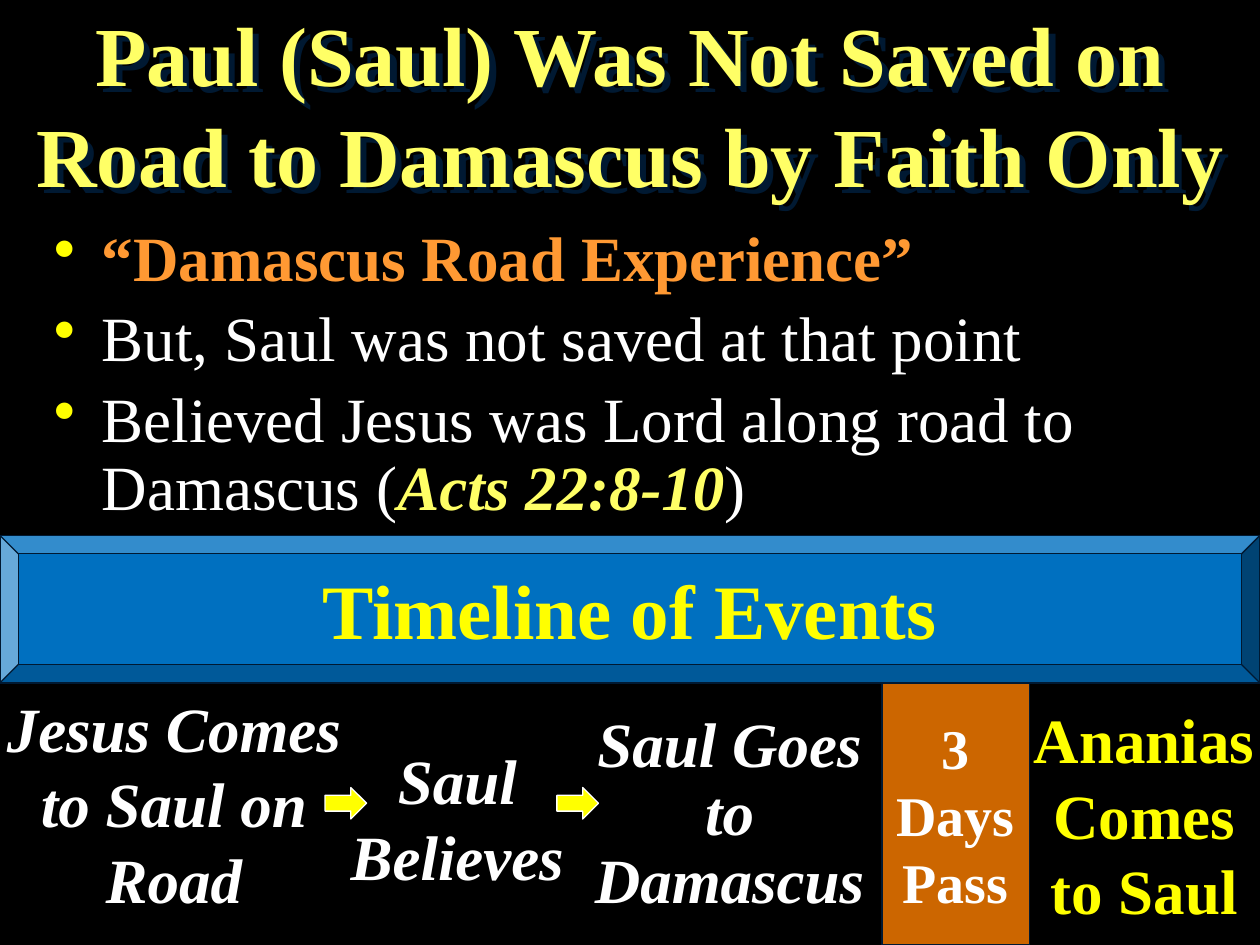
import pptx
import pptx.util
import pptx.dml.color
import pptx.enum.shapes
import pptx.enum.text
import pptx.oxml
import pptx.oxml.ns
from pptx.util import Inches, Pt

SHAPES = pptx.enum.shapes.MSO_SHAPE
ALIGN = pptx.enum.text.PP_ALIGN
ANCHOR = pptx.enum.text.MSO_ANCHOR
FONT = "Times New Roman"
COLORS = {
    "background": "000000",
    "title": "FFFF66",
    "accent": "FF9933",
    "text": "FFFFFF",
    "yellow": "FFFF00",
    "banner": "0070C0",
    "days": "CC6600",
    "outline": "001932",
}


def rgb(name):
    return pptx.dml.color.RGBColor.from_string(COLORS[name])


def xml(tag, attributes="", inner=""):
    namespace = pptx.oxml.ns.nsdecls("a")
    return pptx.oxml.parse_xml(f"<a:{tag} {namespace} {attributes}>{inner}</a:{tag}>")


def add_run(paragraph, text, size=36, color="text", bold=False, italic=False):
    run = paragraph.add_run()
    run.text = text
    font = run.font
    font.name, font.size, font.bold, font.italic = FONT, Pt(size), bold, italic
    font.color.rgb = rgb(color)


def write(holder, text, anchor=ANCHOR.MIDDLE, line_spacing=None, **style):
    """Fill a shape or text box with one centred bold paragraph."""
    frame = holder.text_frame
    frame.word_wrap = True
    frame.vertical_anchor = anchor
    paragraph = frame.paragraphs[0]
    paragraph.alignment = ALIGN.CENTER
    if line_spacing:
        paragraph.line_spacing = line_spacing
    add_run(paragraph, text, bold=True, **style)


def add_text(slide, box, text, **style):
    holder = slide.shapes.add_textbox(*map(Inches, box))
    write(holder, text, **style)
    return holder


def add_filled(slide, kind, box, fill, line):
    shape = slide.shapes.add_shape(kind, *map(Inches, box))
    shape.shadow.inherit = False
    shape.fill.solid()
    shape.fill.fore_color.rgb = rgb(fill)
    shape.line.color.rgb = rgb(line)
    shape.line.width = Pt(0.75)
    return shape


def add_title(slide, box):
    title = add_text(slide, box, "Paul (Saul) Was Not Saved on Road to Damascus by Faith Only",
                     anchor=ANCHOR.BOTTOM, size=48, color="title")
    shadow = (f'<a:outerShdw dist="64000" dir="2700000" algn="ctr">'
              f'<a:srgbClr val="{COLORS["outline"]}"/></a:outerShdw>')
    title.element.spPr.append(xml("effectLst", inner=shadow))


def add_points(slide, box):
    points = [
        [("“Damascus Road Experience”", {"color": "accent", "bold": True})],
        [("But, Saul was not saved at that point", {})],
        [("Believed Jesus was Lord along road to Damascus (", {}),
         ("Acts 22:8-10", {"color": "title", "bold": True, "italic": True}),
         (")", {})],
    ]
    frame = slide.shapes.add_textbox(*map(Inches, box)).text_frame
    frame.word_wrap = True
    for index, runs in enumerate(points):
        paragraph = frame.add_paragraph() if index else frame.paragraphs[0]
        properties = paragraph._p.get_or_add_pPr()
        properties.set("marL", str(Inches(0.38)))
        properties.set("indent", str(-Inches(0.38)))
        properties.append(xml("buClr", inner=f'<a:srgbClr val="{COLORS["yellow"]}"/>'))
        properties.append(xml("buChar", 'char="•"'))
        paragraph.line_spacing = 0.9
        if index:
            paragraph.space_before = Pt(7.2)
        for text, style in runs:
            add_run(paragraph, text, **style)


def add_banner(slide, box):
    banner = add_filled(slide, SHAPES.BEVEL, box, "banner", "outline")
    banner.adjustments[0] = 0.125
    write(banner, "Timeline of Events", size=44, color="yellow")


def add_timeline(slide, box):
    left, top, _, height = box

    def place(x, y, w, h):
        return left + x, top + y, w, h

    add_text(slide, place(-0.08, 0, 2.92, 1.92), "Jesus Comes to Saul on Road",
             anchor=ANCHOR.TOP, italic=True)
    add_text(slide, place(2.67, 0.41, 1.92, 1.31), "Saul Believes", italic=True)
    add_text(slide, place(4.58, 0.18, 2.42, 1.74), "Saul Goes to Damascus",
             line_spacing=0.9, italic=True)
    for x in (2.58, 4.42):
        add_filled(slide, SHAPES.RIGHT_ARROW, place(x, 0.83, 0.33, 0.25), "yellow", "text")
    days = add_filled(slide, SHAPES.RECTANGLE, place(7, 0, 1.17, height), "days", "outline")
    write(days, "3 Days Pass", size=32)
    add_text(slide, place(8.08, 0.08, 2, 1.92), "Ananias Comes to Saul", color="yellow")


def main():
    presentation = pptx.Presentation()
    presentation.slide_width, presentation.slide_height = Inches(10), Inches(7.5)
    slide = presentation.slides.add_slide(presentation.slide_layouts[6])
    slide.background.fill.solid()
    slide.background.fill.fore_color.rgb = rgb("background")
    add_title(slide, (0, 0, 10, 1.67))
    add_points(slide, (0.33, 1.75, 9.33, 2.58))
    add_banner(slide, (0, 4.25, 10, 1.17))
    add_timeline(slide, (0, 5.42, 10, 2.08))
    presentation.save("out.pptx")


if __name__ == "__main__":
    main()
